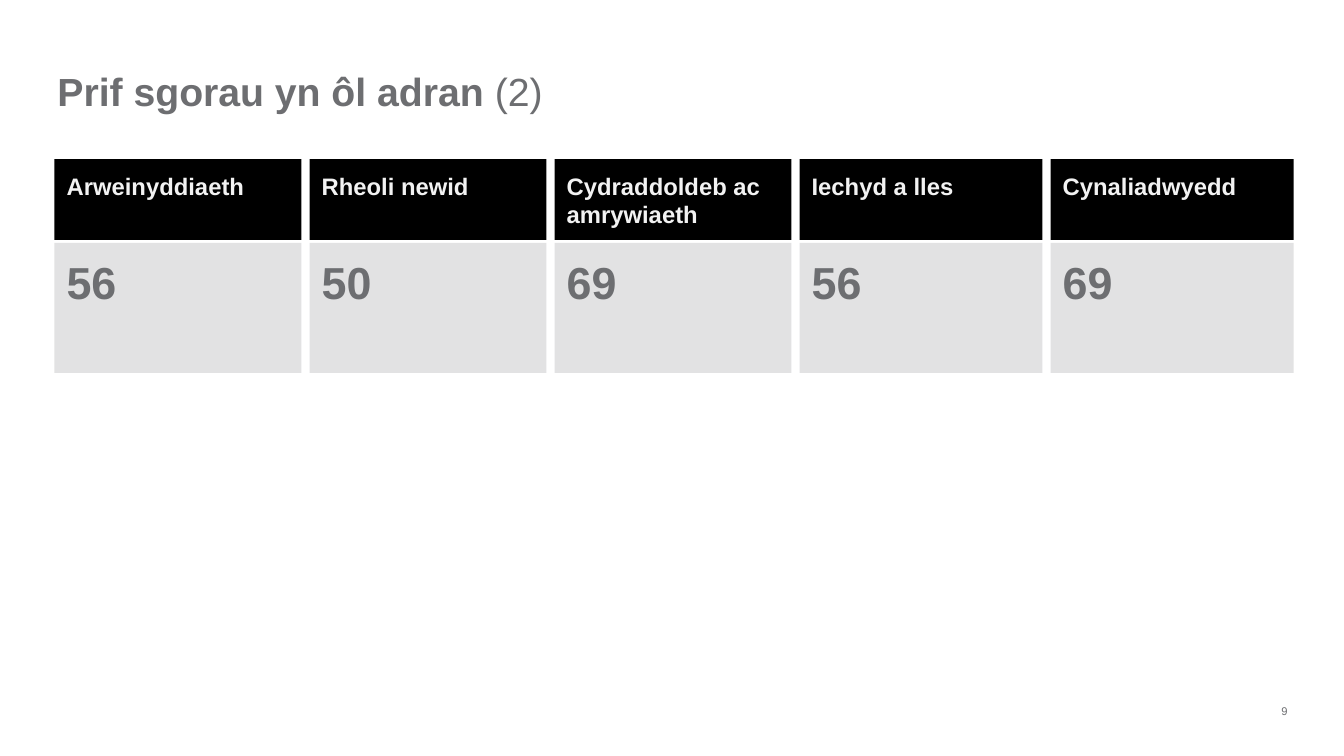
from dataclasses import dataclass

from pptx import Presentation
from pptx.dml.color import RGBColor
from pptx.enum.shapes import MSO_SHAPE
from pptx.enum.text import MSO_ANCHOR, PP_ALIGN
from pptx.util import Inches, Pt


@dataclass(frozen=True)
class Theme:
    font: str = "Arial"
    grey: str = "6D6E71"
    header_fill: str = "000000"
    header_text: str = "F2F2F2"
    score_fill: str = "E2E2E3"
    title_size: int = 28
    header_size: int = 17
    score_size: int = 32
    page_size: int = 8


theme = Theme()


def write_text(shape, *runs, size, color=theme.grey, margin=0.0,
               align=PP_ALIGN.LEFT, anchor=MSO_ANCHOR.TOP):
    """Fill the shape with one paragraph made of (text, bold) runs."""
    frame = shape.text_frame
    frame.word_wrap = True
    frame.vertical_anchor = anchor
    frame.margin_left = frame.margin_right = Inches(margin)
    frame.margin_top = frame.margin_bottom = Inches(margin)
    paragraph = frame.paragraphs[0]
    paragraph.alignment = align
    for text, bold in runs:
        run = paragraph.add_run()
        run.text = text
        run.font.name = theme.font
        run.font.size = Pt(size)
        run.font.bold = bold
        run.font.color.rgb = RGBColor.from_string(color)


def add_panel(slide, left, top, width, height, fill):
    panel = slide.shapes.add_shape(
        MSO_SHAPE.RECTANGLE, Inches(left), Inches(top), Inches(width), Inches(height))
    panel.shadow.inherit = False
    panel.fill.solid()
    panel.fill.fore_color.rgb = RGBColor.from_string(fill)
    panel.line.fill.background()
    return panel


presentation = Presentation()
presentation.slide_width = Inches(13.33)
presentation.slide_height = Inches(7.5)
slide = presentation.slides.add_slide(presentation.slide_layouts[6])

title = slide.shapes.add_textbox(Inches(0.57), Inches(0.67), Inches(11.1), Inches(0.47))
write_text(title, ("Prif sgorau yn ôl adran ", True), ("(2)", False), size=theme.title_size)

# Section scores: heading, score, column width
sections = [
    ("Arweinyddiaeth", 56, 2.45),
    ("Rheoli newid", 50, 2.35),
    ("Cydraddoldeb ac amrywiaeth", 69, 2.35),
    ("Iechyd a lles", 56, 2.41),
    ("Cynaliadwyedd", 69, 2.41),
]
column_gap = 0.08
panel_margin = 0.12
left = 0.54
for heading, score, width in sections:
    score_panel = add_panel(slide, left, 2.41, width, 1.29, theme.score_fill)
    write_text(score_panel, (str(score), True), size=theme.score_size, margin=panel_margin)
    header_panel = add_panel(slide, left, 1.58, width, 0.8, theme.header_fill)
    write_text(header_panel, (heading, True), size=theme.header_size,
               color=theme.header_text, margin=panel_margin)
    left += width + column_gap

page_number = slide.shapes.add_textbox(Inches(12.38), Inches(6.99), Inches(0.39), Inches(0.13))
write_text(page_number, ("9", False), size=theme.page_size,
           align=PP_ALIGN.RIGHT, anchor=MSO_ANCHOR.BOTTOM)

presentation.save("out.pptx")
